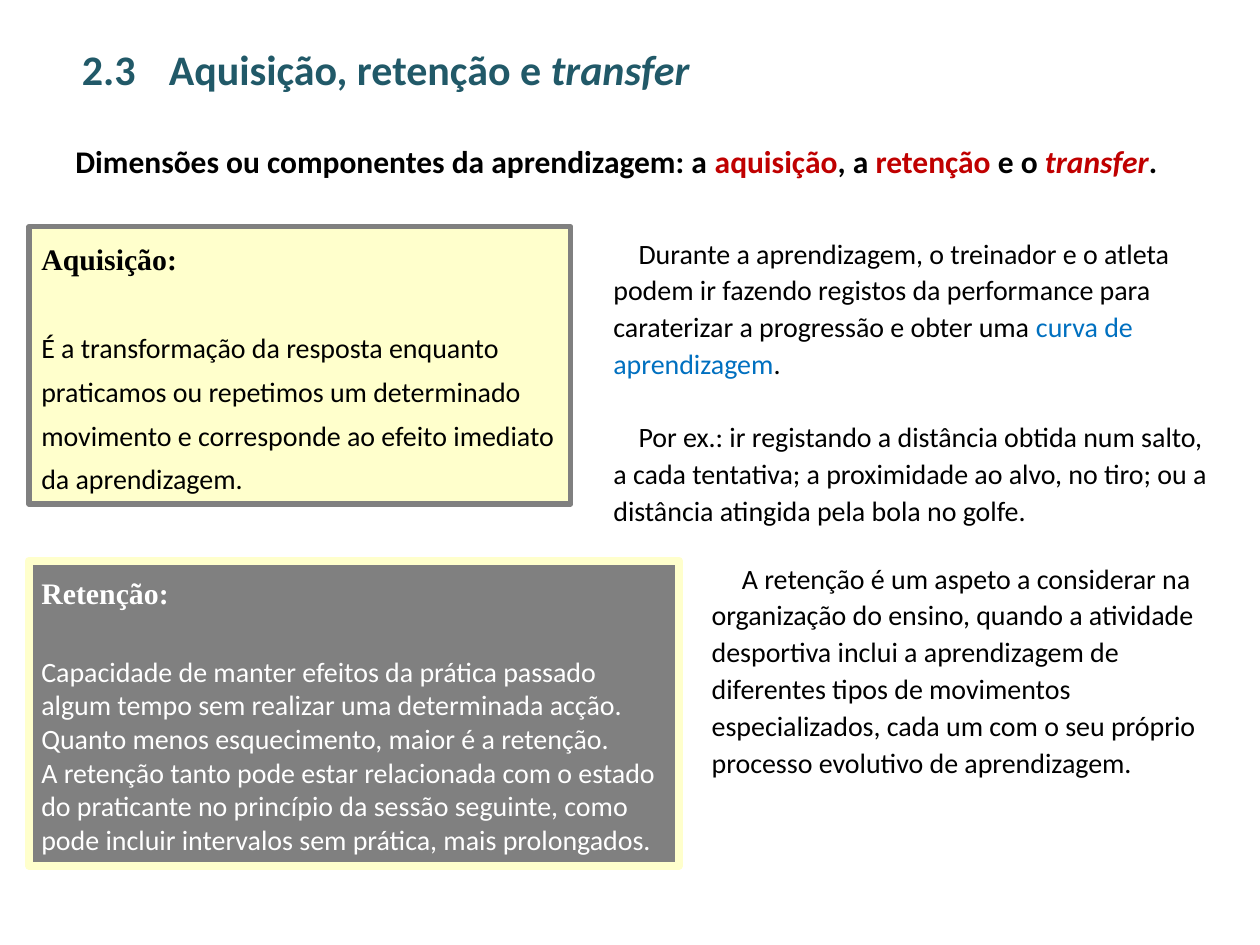
from lxml import etree
from pptx import Presentation, util as u
from pptx.dml.color import RGBColor
from pptx.enum import shapes, text
from pptx.oxml.ns import qn

BLACK = RGBColor(0x00, 0x00, 0x00)
WHITE = RGBColor(0xFF, 0xFF, 0xFF)
TEAL = RGBColor(0x21, 0x59, 0x68)
RED = RGBColor(0xC0, 0x00, 0x00)
BLUE = RGBColor(0x00, 0x70, 0xC0)
CREAM = RGBColor(0xFF, 0xFF, 0xCC)
GRAY = RGBColor(0x80, 0x80, 0x80)


class SlideBuilder:
    BODY_FONT = "Calibri"
    HEADING_FONT = "Times New Roman"
    BODY_SIZE = 16
    HEADING_SIZE = 17
    HEADING_LEADING = 25
    TEXT_LEADING = 21

    def __init__(self, slide):
        self.slide = slide

    def place(self, shape, box):
        shape.left, shape.top, shape.width, shape.height = map(u.Inches, box)

    def fill_paragraph(self, paragraph, runs, size=BODY_SIZE, font=BODY_FONT,
                       color=BLACK, bold=False, leading=None, before=0, indent=0,
                       tab=None):
        """Format a paragraph; each run is (text, own colour or None, italic)."""
        properties = paragraph._p.get_or_add_pPr()
        if indent:
            properties.set("indent", str(u.Inches(indent)))
        if tab:
            tabs = etree.SubElement(properties, qn("a:tabLst"))
            etree.SubElement(tabs, qn("a:tab"), pos=str(u.Inches(tab)), algn="l")
        paragraph.alignment = text.PP_ALIGN.LEFT
        if leading:
            paragraph.line_spacing = u.Pt(leading)
        paragraph.space_before = u.Pt(before)
        paragraph.font.name = font
        paragraph.font.size = u.Pt(size)
        paragraph.font.bold = bold
        paragraph.font.color.rgb = color
        for words, run_color, italic in runs:
            run = paragraph.add_run()
            run.text = words
            if run_color is not None:
                run.font.color.rgb = run_color
            if italic:
                run.font.italic = True

    def title(self, box, runs, tab):
        shape = self.slide.shapes.title
        self.place(shape, box)
        frame = shape.text_frame
        frame.auto_size = text.MSO_AUTO_SIZE.NONE
        frame.vertical_anchor = text.MSO_ANCHOR.MIDDLE
        self.fill_paragraph(frame.paragraphs[0], runs, size=24, color=TEAL,
                            bold=True, tab=tab)

    def text_box(self, box, paragraphs, indent, **style):
        """Add paragraphs with a first-line indent, one line apart."""
        frame = self.slide.shapes.add_textbox(*map(u.Inches, box)).text_frame
        frame.word_wrap = True
        frame.auto_size = text.MSO_AUTO_SIZE.SHAPE_TO_FIT_TEXT
        for index, runs in enumerate(paragraphs):
            paragraph = frame.add_paragraph() if index else frame.paragraphs[0]
            self.fill_paragraph(paragraph, runs, leading=self.TEXT_LEADING,
                                indent=indent,
                                before=self.TEXT_LEADING if index else 0, **style)

    def definition(self, box, heading, paragraphs, fill, line, line_width, color,
                   leading=None):
        """Add a framed box with a heading, a one-line gap and body text."""
        shape = self.slide.shapes.add_shape(
            shapes.MSO_SHAPE.RECTANGLE, *map(u.Inches, box))
        shape.shadow.inherit = False
        shape.fill.solid()
        shape.fill.fore_color.rgb = fill
        shape.line.color.rgb = line
        shape.line.width = u.Pt(line_width)
        frame = shape.text_frame
        frame.word_wrap = True
        frame.auto_size = text.MSO_AUTO_SIZE.SHAPE_TO_FIT_TEXT
        frame.vertical_anchor = text.MSO_ANCHOR.TOP
        self.fill_paragraph(frame.paragraphs[0], [(heading, None, False)],
                            size=self.HEADING_SIZE, font=self.HEADING_FONT,
                            color=color, bold=True, leading=self.HEADING_LEADING)
        for index, words in enumerate(paragraphs):
            self.fill_paragraph(frame.add_paragraph(), [(words, None, False)],
                                color=color, leading=leading,
                                before=0 if index else self.HEADING_LEADING)


def main():
    presentation = Presentation()
    presentation.slide_width = u.Inches(10)
    presentation.slide_height = u.Inches(7.5)
    title_only = presentation.slide_layouts[5]
    builder = SlideBuilder(presentation.slides.add_slide(title_only))

    builder.text_box(
        (0.31, 1.09, 9.3, 0.4),
        [[("Dimensões ou componentes da aprendizagem: a ", None, False),
          ("aquisição", RED, False), (", a ", None, False),
          ("retenção", RED, False), (" e o ", None, False),
          ("transfer", RED, True), (".", None, False)]],
        indent=0.19, size=18, bold=True)
    builder.title(
        (0.55, 0.23, 9.45, 0.63),
        [("2.3\tAquisição, retenção e ", None, False), ("transfer", None, True)],
        tab=0.69)
    builder.text_box(
        (5.55, 4.38, 4.22, 2.25),
        [[("A retenção é um aspeto a considerar na organização do ensino, quando a "
           "atividade desportiva inclui a aprendizagem de diferentes tipos de "
           "movimentos especializados, cada um com o seu próprio processo evolutivo "
           "de aprendizagem.", None, False)]],
        indent=0.24)
    builder.definition(
        (0.23, 1.8, 4.3, 2.2), "Aquisição:",
        ["É a transformação da resposta enquanto praticamos ou repetimos um "
         "determinado movimento e corresponde ao efeito imediato da aprendizagem."],
        fill=CREAM, line=GRAY, line_width=3, color=BLACK,
        leading=builder.HEADING_LEADING)
    builder.text_box(
        (4.77, 1.8, 5, 2.46),
        [[("Durante a aprendizagem, o treinador e o atleta podem ir fazendo registos "
           "da performance para caraterizar a progressão e obter uma ", None, False),
          ("curva de aprendizagem", BLUE, False), (".", None, False)],
         [("Por ex.: ir registando a distância obtida num salto, a cada tentativa; a "
           "proximidade ao alvo, no tiro; ou a distância atingida pela bola no "
           "golfe.", None, False)]],
        indent=0.2)
    builder.definition(
        (0.23, 4.45, 5.16, 2.42), "Retenção:",
        ["Capacidade de manter efeitos da prática passado algum tempo sem realizar "
         "uma determinada acção.",
         "Quanto menos esquecimento, maior é a retenção.",
         "A retenção tanto pode estar relacionada com o estado do praticante no "
         "princípio da sessão seguinte, como pode incluir intervalos sem prática, "
         "mais prolongados."],
        fill=GRAY, line=CREAM, line_width=4.5, color=WHITE)

    presentation.save("out.pptx")


if __name__ == "__main__":
    main()
